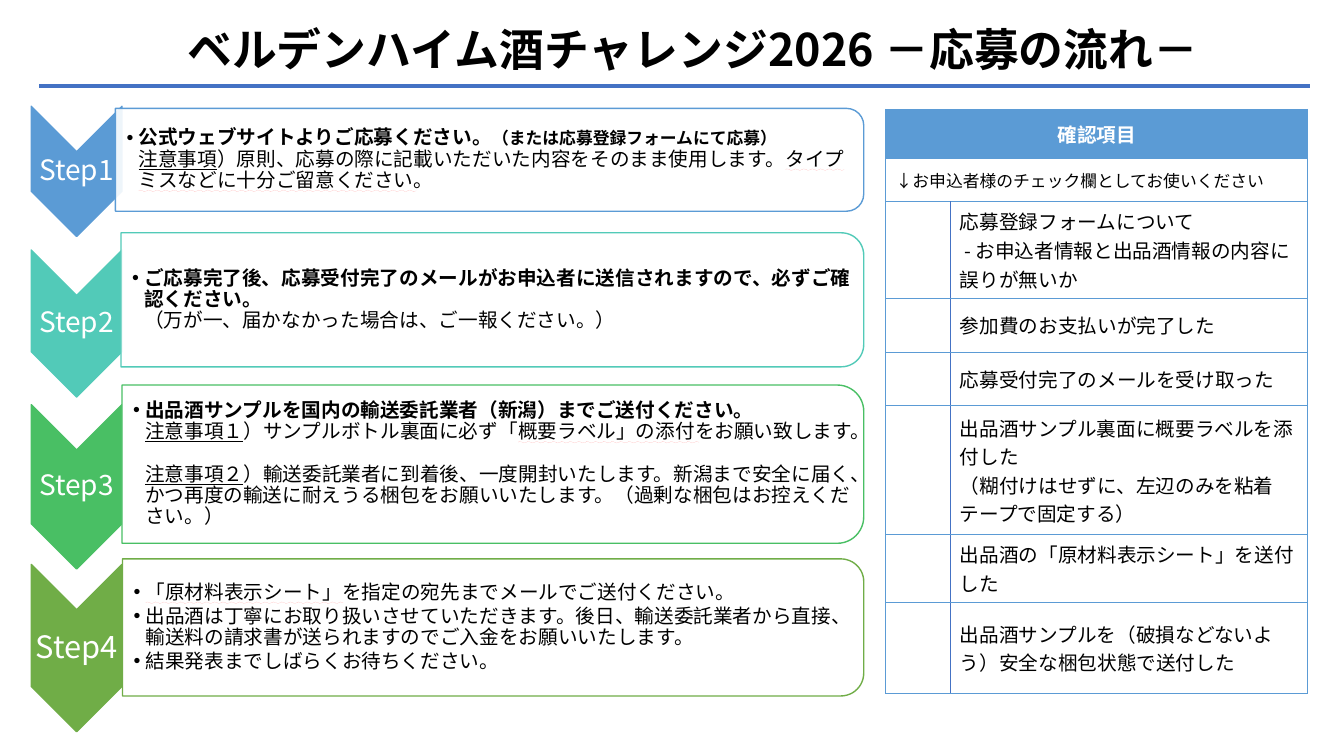
from copy import deepcopy

from lxml.etree import SubElement
from pptx import Presentation
from pptx.dml.color import RGBColor
from pptx.enum.shapes import MSO_CONNECTOR as Connector, MSO_SHAPE as Shape
from pptx.enum.text import MSO_ANCHOR as Anchor, MSO_AUTO_SIZE as AutoSize
from pptx.enum.text import MSO_UNDERLINE as Underline, PP_ALIGN as Align
from pptx.oxml.ns import qn
from pptx.util import Inches, Pt

FONT = "Noto Sans CJK JP"
COLOURS = {
    "black": "000000", "white": "FFFFFF", "rule": "4472C4", "wave": "FF9999",
    "blue": "5B9BD5", "teal": "52CAB8", "green": "49BF64", "olive": "70AD47",
}
CELL = Inches(1) / 12  # the slide is a grid of 160 columns and 90 rows


def colour(name):
    return RGBColor.from_string(COLOURS[name])


def write(para, text, size=14, ink="black", bold=False, underline=None):
    """Add a run to the paragraph; a closing newline becomes a line break."""
    span = para.add_run()
    span.text = text.rstrip("\n")
    span.font.size, span.font.bold, span.font.underline = Pt(size), bold, underline
    span.font.color.rgb = colour(ink)
    span.font.name = FONT
    props = span._r.rPr
    SubElement(props, qn("a:ea"), typeface=FONT)
    if underline == Underline.WAVY_LINE:
        wave = SubElement(props, qn("a:uFill"))
        SubElement(SubElement(wave, qn("a:solidFill")), qn("a:srgbClr"), val=COLOURS["wave"])
        props.find(qn("a:latin")).addprevious(wave)
    if text.endswith("\n"):
        para.add_line_break()
        para._p[-1].append(deepcopy(props))


deck = Presentation()
deck.slide_width, deck.slide_height = Inches(13.33), Inches(7.5)
page = deck.slides.add_slide(deck.slide_layouts.get_by_name("Comparison"))
title, *lists = page.placeholders

# Title and rule
title.left, title.top = int(21.1 * CELL), int(1.9 * CELL)
title.width, title.height = int(133 * CELL), int(7.7 * CELL)
title.text_frame.auto_size = AutoSize.NONE
title.text_frame.vertical_anchor = Anchor.MIDDLE
title.text_frame.paragraphs[0].alignment = Align.LEFT
write(title.text_frame.paragraphs[0], "ベルデンハイム酒チャレンジ2026 －応募の流れ－", size=32, bold=True)

rule = page.shapes.add_connector(
    Connector.STRAIGHT, *(int(n * CELL) for n in (4.7, 10.2, 155.9, 10.2)))
rule.line.color.rgb = colour("rule")
rule.line.width = Pt(3)
SubElement(rule._element.spPr, qn("a:effectLst"))

# Steps: each list item is a sequence of (text, format) parts
BOLD = {"bold": True}
LINE = {"underline": Underline.SINGLE_LINE}
WAVE = {"underline": Underline.WAVY_LINE}
step_items = [
    [[("公式ウェブサイトよりご応募ください。", BOLD),
      ("（または応募登録フォームにて応募）\n", {"bold": True, "size": 12}),
      ("注意事項", LINE),
      ("）原則、応募の際に記載いただいた内容をそのまま使用します。", {}),
      ("タイプミスなどに十分ご留意ください", WAVE), ("。", {})]],
    [[("ご応募完了後、応募受付完了のメールがお申込者に送信されますので、必ずご確認ください。\n", BOLD),
      ("（万が一、届かなかった場合は、ご一報ください。）", {})]],
    [[("出品酒サンプルを国内の輸送委託業者（新潟）までご送付ください。\n", BOLD),
      ("注意事項１", LINE), ("）サンプルボトル裏面に必ず「", {}),
      ("概要ラベル」の添付", WAVE), ("をお願い致します。\n", {}),
      ("注意事項２", LINE),
      ("）輸送委託業者に到着後、一度開封いたします。新潟まで安全に届く、"
       "かつ再度の輸送に耐えうる梱包をお願いいたします。（過剰な梱包はお控えください。）", {})]],
    [[("「原材料表示シート」", WAVE), ("を指定の宛先までメールでご送付ください。", {})],
     [("出品酒は丁寧にお取り扱いさせていただきます。後日、輸送委託業者から直接、"
       "輸送料の請求書が送られますのでご入金をお願いいたします。", {})],
     [("結果発表までしばらくお待ちください。", {})]],
]
# colour, label size, chevron middle and length, panel left, middle and height
step_places = [
    ("blue", 20, 20.4, 15.5, 13.74, 19.02, 12.24),
    ("teal", 20, 38.52, 17.5, 14.4, 35.7, 15.96),
    ("green", 20, 57.96, 19.56, 14.52, 55.26, 18.84),
    ("olive", 22, 77.16, 19.92, 14.58, 74.7, 16.32),
]
CHEVRON_LEFT, CHEVRON_WIDTH = 3.72, 10.8
PANEL_RIGHT, TEXT_RIGHT = 102.8, 102

for number, (items, body, place) in enumerate(zip(step_items, lists, step_places), 1):
    tint, label_size, arrow_middle, arrow_length, left, middle, height = place
    panel_width = PANEL_RIGHT - left
    arrow_centre = CHEVRON_LEFT + CHEVRON_WIDTH / 2
    turned = [
        (Shape.CHEVRON, arrow_centre, arrow_middle, arrow_length, CHEVRON_WIDTH, tint),
        (Shape.ROUND_2_SAME_RECTANGLE, left + panel_width / 2, middle, height, panel_width, "white"),
    ]
    for kind, x, y, across, down, fill in turned:
        box = page.shapes.add_shape(kind, *(
            int(n * CELL) for n in (x - across / 2, y - down / 2, across, down)))
        box.rotation = 90
        box.shadow.inherit = False
        box.fill.solid()
        box.fill.fore_color.rgb = colour(fill)
        box.line.color.rgb = colour(tint)
        box.line.width = Pt(1)
    panel_fill = box._element.spPr.find(qn("a:solidFill"))
    SubElement(panel_fill[0], qn("a:alpha"), val="90000")

    label = page.shapes.add_textbox(*(
        int(n * CELL) for n in (CHEVRON_LEFT, arrow_middle - 3, CHEVRON_WIDTH, 6)))
    body.left, body.top = int(left * CELL), int((middle - height / 2 + 0.7) * CELL)
    body.width, body.height = int((TEXT_RIGHT - left) * CELL), int((height - 1.4) * CELL)
    page.shapes.element.append(body.element)  # bring the list in front of its panel
    for frame, inset in ((label.text_frame, 0.01), (body.text_frame, 0.11)):
        frame.word_wrap = True
        frame.auto_size = AutoSize.NONE
        frame.vertical_anchor = Anchor.MIDDLE
        frame.margin_left = Inches(inset)
        frame.margin_top = frame.margin_right = frame.margin_bottom = Inches(0.01)

    para = label.text_frame.paragraphs[0]
    para.alignment = Align.CENTER
    para.line_spacing = 0.9
    write(para, f"Step{number}", size=label_size, ink="white")

    for index, parts in enumerate(items):
        para = body.text_frame.add_paragraph() if index else body.text_frame.paragraphs[0]
        props = para._p.get_or_add_pPr()
        props.set("marL", str(Inches(0.12)))
        props.set("indent", str(-Inches(0.12)))
        SubElement(props, qn("a:buFont"), typeface="Arial")
        SubElement(props, qn("a:buChar"), char="•")
        para.alignment = Align.LEFT
        para.line_spacing = 0.9
        para.space_before, para.space_after = Pt(0), Pt(2)
        for text, style in parts:
            write(para, text, **style)

# Checklist
checks = [
    ["確認項目"],
    ["↓お申込者様のチェック欄としてお使いください"],
    ["応募登録フォームについて", " - お申込者情報と出品酒情報の内容に誤りが無いか"],
    ["参加費のお支払いが完了した"],
    ["応募受付完了のメールを受け取った"],
    ["出品酒サンプル裏面に概要ラベルを添付した", "（糊付けはせずに、左辺のみを粘着テープで固定する）"],
    ["出品酒の「原材料表示シート」を送付した"],
    ["出品酒サンプルを（破損などないよう）安全な梱包状態で送付した"],
]
row_heights = [5.9, 5.1, 11.52, 6.4, 6.4, 15.36, 7.32, 10.92]
column_widths = [7.65, 42.6]
table = page.shapes.add_table(len(checks), 2, *(
    int(n * CELL) for n in (105.4, 13, sum(column_widths), sum(row_heights)))).table
table.horz_banding = False
for column, width in zip(table.columns, column_widths):
    column.width = int(width * CELL)

for row, (lines, height) in enumerate(zip(checks, row_heights)):
    table.rows[row].height = int(height * CELL)
    full_width = row < 2
    if full_width:
        table.cell(row, 0).merge(table.cell(row, 1))
    for column in range(2):
        cell = table.cell(row, column)
        for side in ("lnL", "lnR", "lnT", "lnB"):
            inner = not full_width and (column, side) in ((0, "lnR"), (1, "lnL"))
            edge = SubElement(cell._tc.get_or_add_tcPr(), qn(f"a:{side}"), w=str(Pt(0.5)))
            SubElement(SubElement(edge, qn("a:solidFill")), qn("a:srgbClr"),
                       val=COLOURS["rule" if inner else "blue"])
        cell.fill.solid()
        cell.fill.fore_color.rgb = colour("white" if row else "blue")
    cell = table.cell(row, 0 if full_width else 1)
    cell.vertical_anchor = Anchor.MIDDLE
    for index, line in enumerate(lines):
        para = cell.text_frame.add_paragraph() if index else cell.text_frame.paragraphs[0]
        para.alignment = Align.LEFT if row else Align.CENTER
        write(para, line, size=12 if row == 1 else 14,
              ink="black" if row else "white", bold=row == 0)

deck.save("out.pptx")
